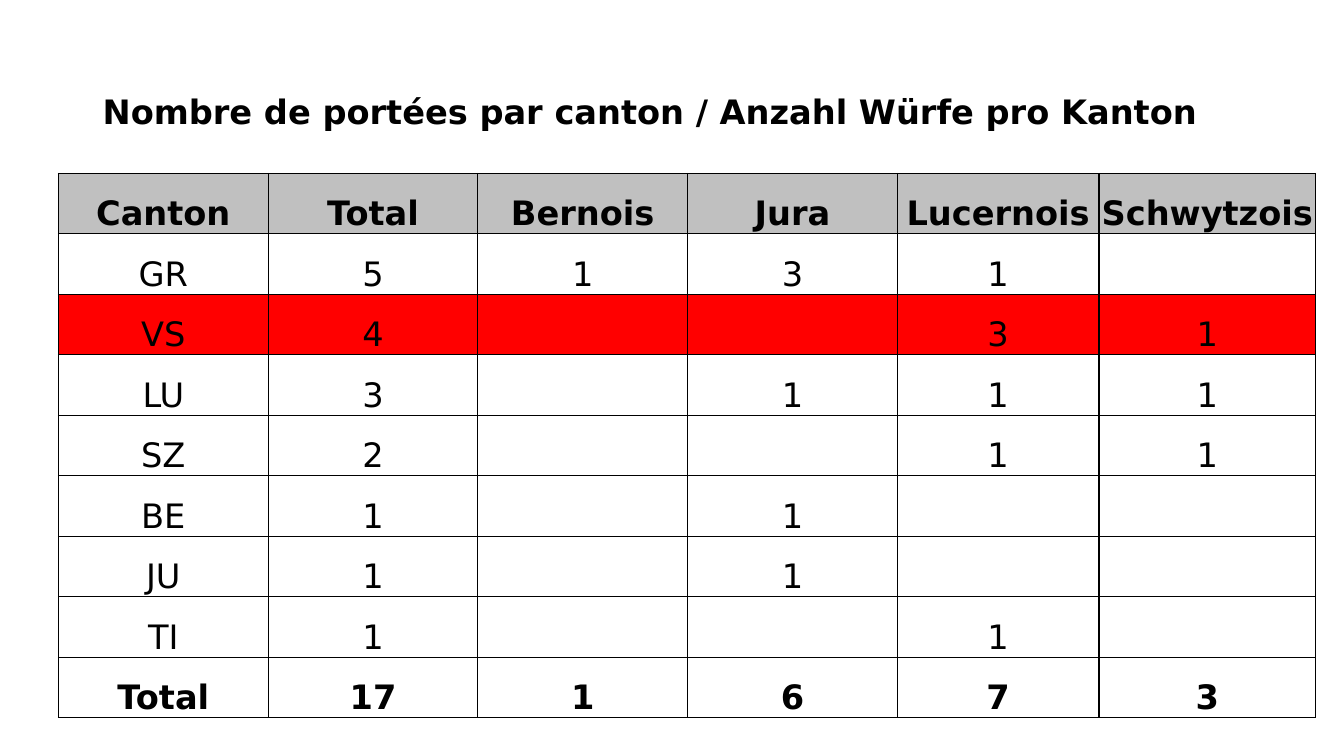
from lxml.etree import SubElement
from pptx import Presentation
from pptx.dml.color import RGBColor
from pptx.enum.text import MSO_ANCHOR, PP_ALIGN
from pptx.oxml.ns import qn
from pptx.util import Inches, Pt

TITLE = "Nombre de portées par canton / Anzahl Würfe pro Kanton"
ROWS = [
    ("Canton", "Total", "Bernois", "Jura", "Lucernois", "Schwytzois"),
    ("GR", "5", "1", "3", "1", ""),
    ("VS", "4", "", "", "3", "1"),
    ("LU", "3", "", "1", "1", "1"),
    ("SZ", "2", "", "", "1", "1"),
    ("BE", "1", "", "1", "", ""),
    ("JU", "1", "", "1", "", ""),
    ("TI", "1", "", "", "1", ""),
    ("Total", "17", "1", "6", "7", "3"),
]
COL_WIDTHS = [2.08, 2.08, 2.08, 2.08, 2, 2.15]
ROW_HEIGHT = 0.6
BOLD_ROWS = ("Canton", "Total")

BLACK = RGBColor(0x00, 0x00, 0x00)
WHITE = RGBColor(0xFF, 0xFF, 0xFF)
GREY = RGBColor(0xC0, 0xC0, 0xC0)
RED = RGBColor(0xFF, 0x00, 0x00)
ROW_FILLS = {"Canton": GREY, "VS": RED}

FONT = {"name": "DejaVu Sans", "size": Pt(24)}
CELL = {"margin_left": 0, "margin_right": 0, "margin_top": 0, "margin_bottom": 0,
        "vertical_anchor": MSO_ANCHOR.BOTTOM}
CELL_PARAGRAPH = {"alignment": PP_ALIGN.CENTER, "line_spacing": 1.15,
                  "space_after": Pt(10)}


def set_attributes(target, values):
    for name, value in values.items():
        setattr(target, name, value)


def write(p, text, bold):
    r = p.add_run()
    r.text = text
    set_attributes(r.font, {**FONT, "bold": bold})
    r.font.color.rgb = BLACK


def add_borders(cell):
    tc_pr = cell._tc.get_or_add_tcPr()
    for side in ("a:lnL", "a:lnR", "a:lnT", "a:lnB"):
        line = SubElement(tc_pr, qn(side), w=str(Pt(1)))
        fill = SubElement(line, qn("a:solidFill"))
        SubElement(fill, qn("a:srgbClr"), val=str(BLACK))


def add_title(s):
    box = s.shapes.add_textbox(Inches(0.92), Inches(0.4), Inches(11.5), Inches(1.45))
    tf = box.text_frame
    set_attributes(tf, {"word_wrap": True, "vertical_anchor": MSO_ANCHOR.MIDDLE})
    p = tf.paragraphs[0]
    p.line_spacing = 0.9
    write(p, TITLE, True)


def add_litter_table(s):
    table = s.shapes.add_table(
        len(ROWS), len(COL_WIDTHS), Inches(0.58), Inches(1.72),
        Inches(sum(COL_WIDTHS)), Inches(ROW_HEIGHT * len(ROWS))).table
    set_attributes(table, {"first_row": False, "horz_banding": False})
    for column, width in zip(table.columns, COL_WIDTHS):
        column.width = Inches(width)
    for row, values in zip(table.rows, ROWS):
        row.height = Inches(ROW_HEIGHT)
        canton = values[0]
        for cell, value in zip(row.cells, values):
            set_attributes(cell, CELL)
            add_borders(cell)
            cell.fill.solid()
            cell.fill.fore_color.rgb = ROW_FILLS.get(canton, WHITE)
            if value:
                p = cell.text_frame.paragraphs[0]
                set_attributes(p, CELL_PARAGRAPH)
                write(p, value, canton in BOLD_ROWS)


def main():
    prs = Presentation()
    prs.slide_width, prs.slide_height = Inches(13.33), Inches(7.5)
    s = prs.slides.add_slide(prs.slide_layouts[6])
    add_title(s)
    add_litter_table(s)
    prs.save("out.pptx")


if __name__ == "__main__":
    main()
